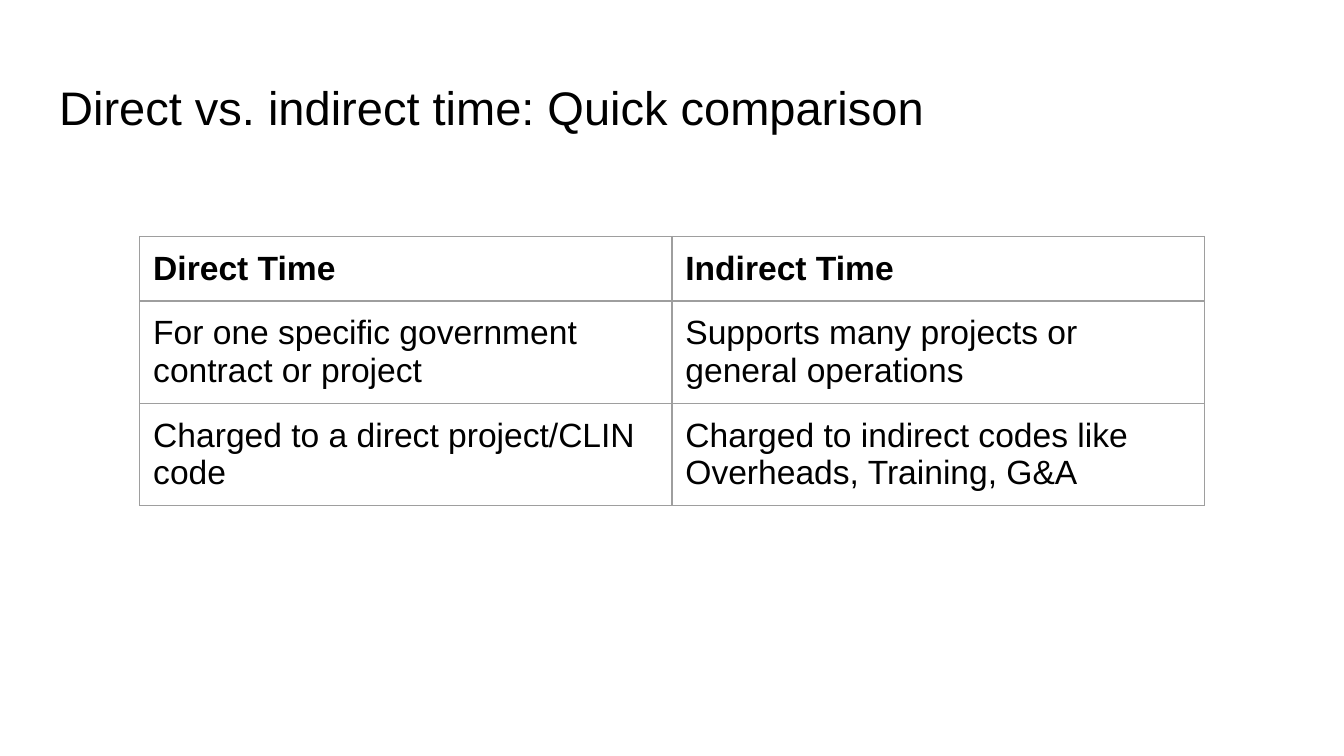
"""Build the slide comparing direct and indirect time."""
from dataclasses import dataclass

from lxml import etree
from pptx import Presentation
from pptx import util as u
from pptx.dml import color
from pptx.enum import text
from pptx.oxml import ns

EMU_PER_PX = 4572


@dataclass(frozen=True)
class Theme:
    font: str = "Arial"
    ink: str = "000000"
    paper: str = "FFFFFF"
    border: str = "9E9E9E"
    border_pt: float = 0.75
    title_pt: float = 25.2
    cell_pt: float = 18
    inset: int = 20


@dataclass(frozen=True)
class Box:
    left: int
    top: int
    width: int
    height: int


@dataclass(frozen=True)
class Row:
    direct: str
    indirect: str
    bold: bool = False


THEME = Theme()
SLIDE = Box(0, 0, 2000, 1125)
TITLE = Box(68, 97, 1864, 125)
ROW_HEIGHT = 84
ROWS = (
    Row("Direct Time", "Indirect Time", bold=True),
    Row("For one specific government contract or project",
        "Supports many projects or general operations"),
    Row("Charged to a direct project/CLIN code",
        "Charged to indirect codes like Overheads, Training, G&A"),
)
TABLE = Box(208, 352, 1584, ROW_HEIGHT * len(ROWS))


def px(length: int) -> u.Emu:
    return u.Emu(length * EMU_PER_PX)


def write(para, words: str, size: float, bold: bool = False) -> None:
    para.alignment = text.PP_ALIGN.LEFT
    span = para.add_run()
    span.text = words
    span.font.name = THEME.font
    span.font.size = u.Pt(size)
    span.font.bold = bold
    span.font.color.rgb = color.RGBColor.from_string(THEME.ink)


def set_insets(holder) -> None:
    for side in ("left", "top", "right", "bottom"):
        setattr(holder, f"margin_{side}", px(THEME.inset))


def add_borders(cell) -> None:
    properties = cell._tc.get_or_add_tcPr()
    for index, side in enumerate("LRTB"):
        line = etree.Element(ns.qn(f"a:ln{side}"), w=str(u.Pt(THEME.border_pt)))
        fill = etree.SubElement(line, ns.qn("a:solidFill"))
        etree.SubElement(fill, ns.qn("a:srgbClr"), val=THEME.border)
        properties.insert(index, line)


def draw_title(page, box: Box, words: str) -> None:
    title = page.shapes.title
    title.left, title.top = px(box.left), px(box.top)
    title.width, title.height = px(box.width), px(box.height)
    frame = title.text_frame
    frame.word_wrap = True
    frame.auto_size = text.MSO_AUTO_SIZE.NONE
    frame.vertical_anchor = text.MSO_ANCHOR.TOP
    set_insets(frame)
    write(frame.paragraphs[0], words, THEME.title_pt)


def draw_cell(cell, words: str, bold: bool) -> None:
    set_insets(cell)
    cell.vertical_anchor = text.MSO_ANCHOR.TOP
    cell.fill.background()
    add_borders(cell)
    write(cell.text_frame.paragraphs[0], words, THEME.cell_pt, bold)


def draw_table(page, box: Box, rows: tuple[Row, ...]) -> None:
    table = page.shapes.add_table(
        len(rows), 2, px(box.left), px(box.top),
        px(box.width), px(box.height)).table
    table.first_row = table.horz_banding = False
    for index, row in enumerate(rows):
        for column, words in enumerate((row.direct, row.indirect)):
            draw_cell(table.cell(index, column), words, row.bold)


def main() -> None:
    deck = Presentation()
    deck.slide_width, deck.slide_height = px(SLIDE.width), px(SLIDE.height)
    page = deck.slides.add_slide(deck.slide_layouts.get_by_name("Title Only"))
    page.background.fill.solid()
    page.background.fill.fore_color.rgb = color.RGBColor.from_string(THEME.paper)
    draw_title(page, TITLE, "Direct vs. indirect time: Quick comparison")
    draw_table(page, TABLE, ROWS)
    deck.save("out.pptx")


if __name__ == "__main__":
    main()
